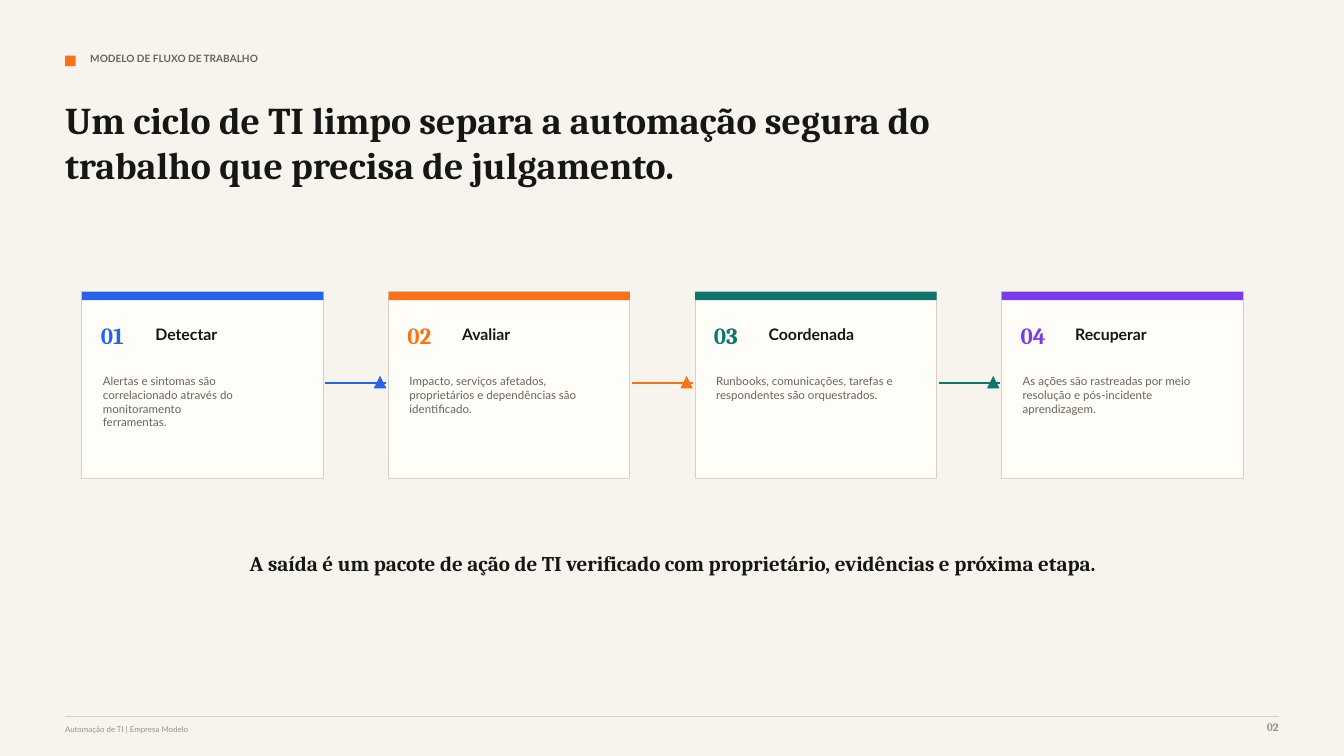
from lxml.etree import SubElement
from pptx import Presentation
from pptx.dml.color import RGBColor
from pptx.enum.shapes import MSO_CONNECTOR, MSO_SHAPE
from pptx.enum.text import MSO_ANCHOR, MSO_AUTO_SIZE, PP_ALIGN
from pptx.oxml.ns import qn
from pptx.util import Pt

PX = 9525
SERIF, SANS = "Cambria", "Lato"
PAPER = RGBColor(0xF7, 0xF4, 0xEE)
CARD = RGBColor(0xFF, 0xFD, 0xF8)
BORDER = RGBColor(0xD9, 0xD0, 0xC3)
INK = RGBColor(0x17, 0x16, 0x14)
GRAY = RGBColor(0x69, 0x63, 0x5A)
PALE = RGBColor(0x9A, 0x91, 0x84)
BLUE = RGBColor(0x25, 0x63, 0xEB)
ORANGE = RGBColor(0xF9, 0x73, 0x16)
GREEN = RGBColor(0x0F, 0x76, 0x6E)
PURPLE = RGBColor(0x7C, 0x3A, 0xED)

SECTION = "MODELO DE FLUXO DE TRABALHO"
TITLE = "Um ciclo de TI limpo separa a automação segura do trabalho que precisa de julgamento."
STEPS = [
    ("Detectar", BLUE, ["Alertas e sintomas são",
                        "correlacionado através do monitoramento",
                        "ferramentas."]),
    ("Avaliar", ORANGE, ["Impacto, serviços afetados,",
                         "proprietários e dependências são",
                         "identificado."]),
    ("Coordenada", GREEN, ["Runbooks, comunicações, tarefas e",
                           "respondentes são orquestrados."]),
    ("Recuperar", PURPLE, ["As ações são rastreadas por meio",
                           "resolução e pós-incidente",
                           "aprendizagem."]),
]
RESULT = "A saída é um pacote de ação de TI verificado com proprietário, evidências e próxima etapa."
FOOTER = "Automação de TI | Empresa Modelo"
PAGE = "02"

MARGIN, CONTENT_WIDTH = 62, 1156
CARD_LEFT, CARD_TOP, CARD_WIDTH, CARD_HEIGHT = 78, 278, 230, 178
CARD_PITCH = 292
ARROW_Y, ARROW_LENGTH, ARROW_HEAD = 365, 58, 12


def emu(*lengths):
    return [length * PX for length in lengths]


def write(shape, lines, size, color, font=SANS, bold=False, align=PP_ALIGN.LEFT):
    """Fill a shape with one paragraph per line, without insets."""
    frame = shape.text_frame
    frame.word_wrap = True
    frame.auto_size = MSO_AUTO_SIZE.NONE
    frame.vertical_anchor = MSO_ANCHOR.TOP
    frame.margin_left = frame.margin_top = frame.margin_right = frame.margin_bottom = 0
    frame.text = "\n".join(lines)
    for paragraph in frame.paragraphs:
        paragraph.alignment = align
        paragraph.font.name = font
        paragraph.font.size = Pt(size)
        paragraph.font.bold = bold
        paragraph.font.color.rgb = color


def add_text(slide, box, lines, size, color, **style):
    write(slide.shapes.add_textbox(*emu(*box)), lines, size, color, **style)


def add_block(slide, box, fill, kind=MSO_SHAPE.RECTANGLE, border=None):
    shape = slide.shapes.add_shape(kind, *emu(*box))
    shape.shadow.inherit = False
    shape.fill.solid()
    shape.fill.fore_color.rgb = fill
    if border is None:
        shape.line.fill.background()
    else:
        shape.line.color.rgb = border
        shape.line.width = Pt(0.75)


def add_rule(slide, left, y, length, color, width):
    rule = slide.shapes.add_connector(MSO_CONNECTOR.STRAIGHT, *emu(left, y, left + length, y))
    rule.line.color.rgb = color
    rule.line.width = Pt(width)
    SubElement(rule._element.spPr, qn("a:effectLst"))


def add_step(slide, index, name, color, lines):
    left = CARD_LEFT + index * CARD_PITCH
    add_block(slide, (left, CARD_TOP, CARD_WIDTH, CARD_HEIGHT), CARD, border=BORDER)
    add_block(slide, (left, CARD_TOP, CARD_WIDTH, 8), color)
    add_text(slide, (left + 18, CARD_TOP + 28, 44, 28), [f"{index + 1:02}"], 16.5, color,
             font=SERIF, bold=True)
    add_text(slide, (left + 70, CARD_TOP + 31, 128, 20), [name], 11.25, INK, bold=True)
    add_text(slide, (left + 20, CARD_TOP + 78, 184, 68), lines, 8.25, GRAY)
    if index < len(STEPS) - 1:
        start = left + CARD_WIDTH + 2
        add_rule(slide, start, ARROW_Y, ARROW_LENGTH, color, 1.75)
        head_left = start + ARROW_LENGTH - ARROW_HEAD
        add_block(slide, (head_left, ARROW_Y - 7, ARROW_HEAD, ARROW_HEAD), color,
                  kind=MSO_SHAPE.ISOSCELES_TRIANGLE)


def main():
    presentation = Presentation()
    presentation.slide_width, presentation.slide_height = emu(1280, 720)
    slide = presentation.slides.add_slide(presentation.slide_layouts[5])
    slide.background.fill.solid()
    slide.background.fill.fore_color.rgb = PAPER

    title = slide.shapes.title
    title.left, title.top, title.width, title.height = emu(MARGIN, 92, 900, 104)
    write(title, [TITLE], 27, INK, font=SERIF, bold=True)
    add_block(slide, (MARGIN, 53, 10, 10), ORANGE)
    add_text(slide, (86, 50, 620, 18), [SECTION], 7.2, GRAY, bold=True)

    for index, step in enumerate(STEPS):
        add_step(slide, index, *step)

    add_text(slide, (176, 524, 930, 42), [RESULT], 15, INK,
             font=SERIF, bold=True, align=PP_ALIGN.CENTER)
    add_rule(slide, MARGIN, 682, CONTENT_WIDTH, BORDER, 0.75)
    add_text(slide, (MARGIN, 690, 760, 14), [FOOTER], 5.6, PALE)
    add_text(slide, (MARGIN + CONTENT_WIDTH - 48, 686, 48, 18), [PAGE], 8.25, PALE,
             font=SERIF, bold=True, align=PP_ALIGN.RIGHT)
    presentation.save("out.pptx")


if __name__ == "__main__":
    main()
